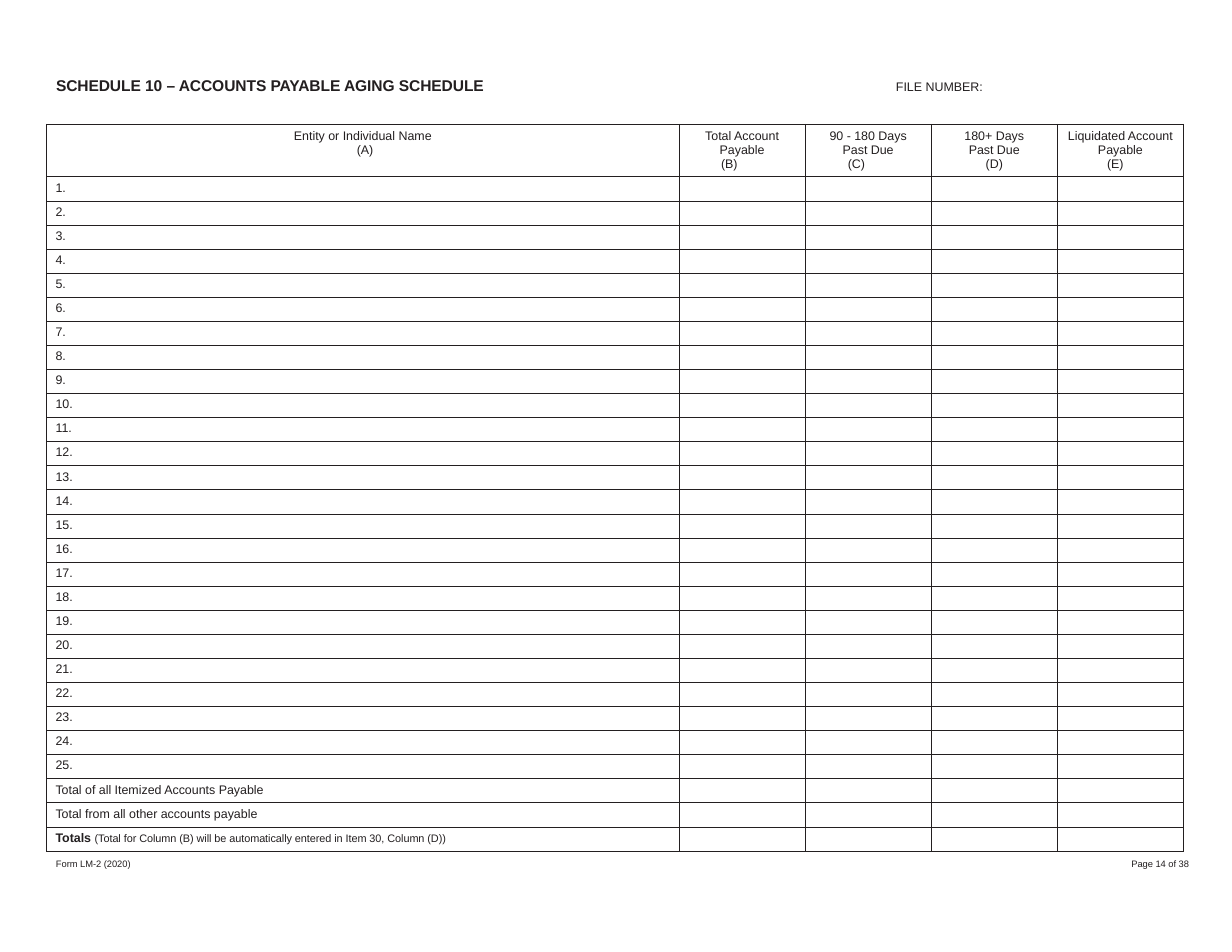
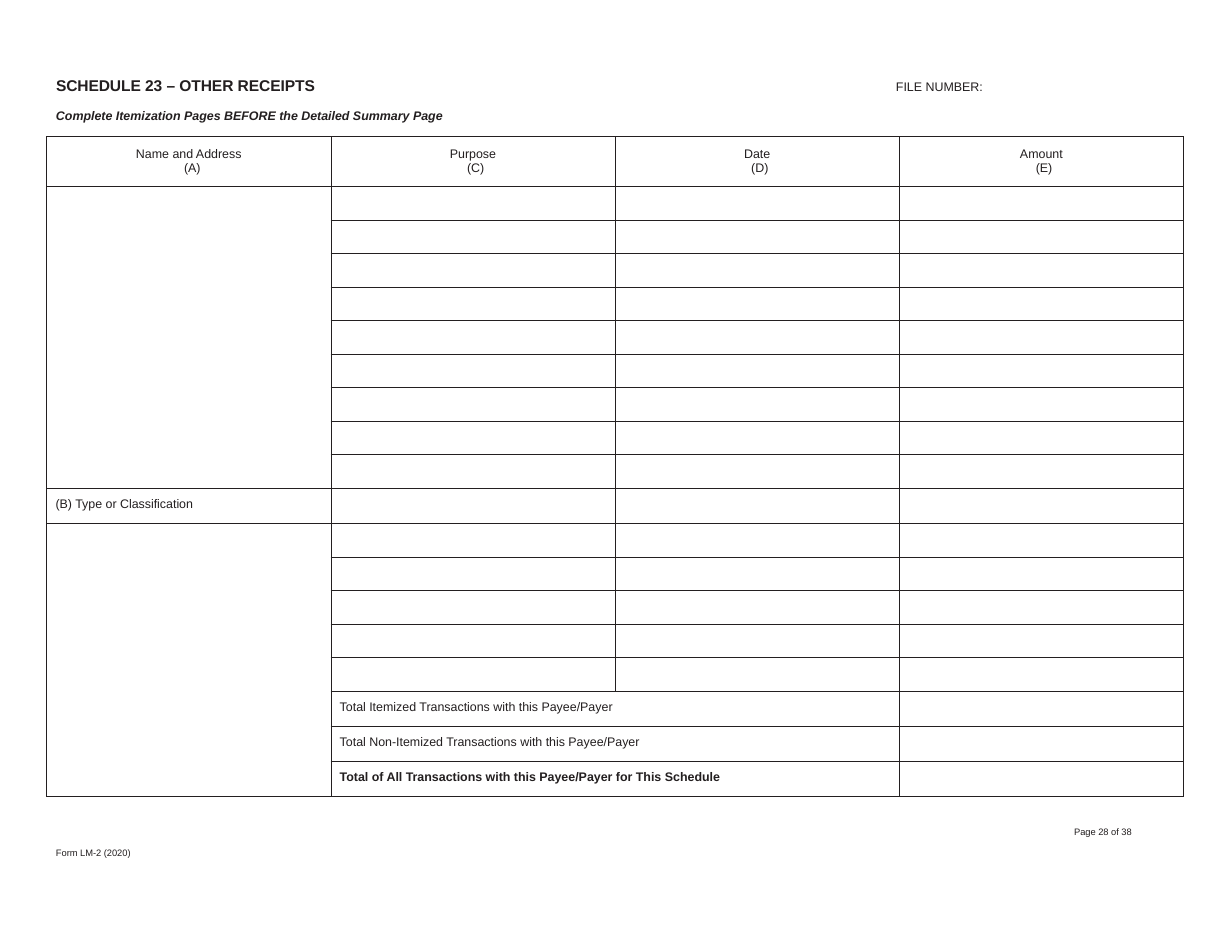
from lxml import etree
from pptx import Presentation
from pptx.dml.color import RGBColor
from pptx.enum.text import MSO_ANCHOR, PP_ALIGN
from pptx.oxml.ns import qn
from pptx.util import Cm, Pt

LEFT, MID, TOP = PP_ALIGN.LEFT, PP_ALIGN.CENTER, MSO_ANCHOR.TOP
INK = "231F20"
FONT = "Arial"
EDGE = 1.06      # left edge of both tables
WIDE = 25.78     # width of both tables


def style(par, size=8, bold=False, slant=False, align=LEFT):
    font = par.font
    font.name, font.size, font.bold, font.italic = FONT, Pt(size), bold, slant
    font.color.rgb = RGBColor.from_string(INK)
    font._rPr.set("spc", "-3")
    par.alignment = align


def grid(slide, top, widths, heights):
    """Add an unfilled table with thin ruled cells."""
    frame = slide.shapes.add_table(len(heights), len(widths), Cm(EDGE), Cm(top),
                                   Cm(sum(widths)), Cm(sum(heights)))
    table = frame.table
    table.first_row = table.horz_banding = False
    for col, width in zip(table.columns, widths):
        col.width = Cm(width)
    for row, height in zip(table.rows, heights):
        row.height = Cm(height)
    for cell in table.iter_cells():
        cell.margin_left = Cm(0.2)
        cell.margin_right = cell.margin_bottom = 0
        cell.margin_top = Cm(0.09)
        props = cell._tc.get_or_add_tcPr()
        for side in ("a:lnL", "a:lnR", "a:lnT", "a:lnB"):
            line = etree.SubElement(props, qn(side), w=str(Pt(0.5)))
            fill = etree.SubElement(line, qn("a:solidFill"))
            etree.SubElement(fill, qn("a:srgbClr"), val=INK)
        cell.fill.background()
        par = cell.text_frame.paragraphs[0]
        style(par)
        par._p.get_or_add_endParaRPr().set("sz", "800")  # keeps empty rows low
    return table


deck = Presentation()
deck.slide_width, deck.slide_height = Cm(27.94), Cm(21.59)

# Title, file number and footers; each note is text, left, top, width, size, slant
FORM, FILE = "Form LM-2 (2020)", "FILE NUMBER:"
pages = [
    ("SCHEDULE 10 – ACCOUNTS PAYABLE AGING SCHEDULE", [
        (FILE, 20.32, 1.8, 3, 8, False),
        (FORM, 1.27, 19.46, 4.6, 6, False),
        ("Page 14 of 38", 25.66, 19.46, 2, 6, False)]),
    ("SCHEDULE 23 – OTHER RECEIPTS", [
        (FILE, 20.32, 1.8, 3, 8, False),
        ("Complete Itemization Pages BEFORE the Detailed Summary Page",
         1.27, 2.45, 12, 8, True),
        (FORM, 1.27, 19.21, 4.6, 6, False),
        ("Page 28 of 38", 24.36, 18.73, 2.5, 6, False)]),
]
slides = []
for head, notes in pages:
    slide = deck.slides.add_slide(deck.slide_layouts[5])
    slides.append(slide)
    items = [(slide.shapes.title, (head, 1.27, 1.73, 14, 10, False))]
    items += [(slide.shapes.add_textbox(0, 0, 0, 0), note) for note in notes]
    for box, (text, left, top, width, size, slant) in items:
        box.left, box.top = Cm(left), Cm(top)
        box.width, box.height = Cm(width), Cm(size * 0.045)
        body = box.text_frame
        body.word_wrap, body.vertical_anchor = True, TOP
        body.margin_left = body.margin_right = 0
        body.margin_top = body.margin_bottom = 0
        body.text = text
        style(body.paragraphs[0], size, bold=size > 8 or slant, slant=slant)

# Accounts payable: heading, letter, left and right indent of the letter
heads = [("Entity or Individual Name", "(A)", 0.1, 0),
         ("Total Account\vPayable", "(B)", 0, 0.58),
         ("90 - 180 Days\vPast Due", "(C)", 0, 0.53),
         ("180+ Days\vPast Due", "(D)", 0, 0),
         ("Liquidated Account\vPayable", "(E)", 0, 0.23)]
aging = grid(slides[0], 2.82, [WIDE - 4 * 2.86] + [2.86] * 4,
             [1.19] + [(16.5 - 1.19) / 28] * 28)
labels = [f"{num}." for num in range(1, 26)]
labels += ["Total of all Itemized Accounts Payable",
           "Total from all other accounts payable"]
for row, label in enumerate(labels, 1):
    cell = aging.cell(row, 0)
    cell.text = label
    style(cell.text_frame.paragraphs[0])
par = aging.cell(28, 0).text_frame.paragraphs[0]
for text, size, bold in [
        ("Totals ", 8, True),
        ("(Total for Column (B) will be automatically entered in Item 30, Column (D))",
         7, False)]:
    run = par.add_run()
    run.text, run.font.size, run.font.bold = text, Pt(size), bold

# Other receipts
names = [("Name and Address", "(A)", 0.16, 0), ("Purpose", "(C)", 0.12, 0),
         ("Date", "(D)", 0.12, 0), ("Amount", "(E)", 0.12, 0)]
funds = grid(slides[1], 3.1, [WIDE / 4] * 4,
             [1.13] + [0.76] * 9 + [0.8] + [0.76] * 5 + [0.8] * 3)
funds.cell(1, 0).merge(funds.cell(9, 0))
funds.cell(11, 0).merge(funds.cell(18, 0))
sums = [(10, 0, "(B) Type or Classification"),
        (16, 1, "Total Itemized Transactions with this Payee/Payer"),
        (17, 1, "Total Non-Itemized Transactions with this Payee/Payer"),
        (18, 1, "Total of All Transactions with this Payee/Payer for This Schedule")]
for row, col, text in sums:
    cell = funds.cell(row, col)
    if col:
        cell.merge(funds.cell(row, 2))
    cell.text = text
    cell.margin_top = Cm(0.2)
    style(cell.text_frame.paragraphs[0], bold=row == 18)

# Column headings of both tables
for table, titles, top in [(aging, heads, 0.1), (funds, names, 0.23)]:
    for col, (text, mark, before, after) in enumerate(titles):
        cell = table.cell(0, col)
        cell.margin_left, cell.margin_top = 0, Cm(top)
        cell.text_frame.text = f"{text}\n{mark}"
        for par in cell.text_frame.paragraphs:
            style(par, align=MID)
            par.line_spacing = Pt(9.1)
        props = par._p.get_or_add_pPr()
        props.set("marL", str(Cm(before)))
        props.set("marR", str(Cm(after)))

deck.save("out.pptx")
